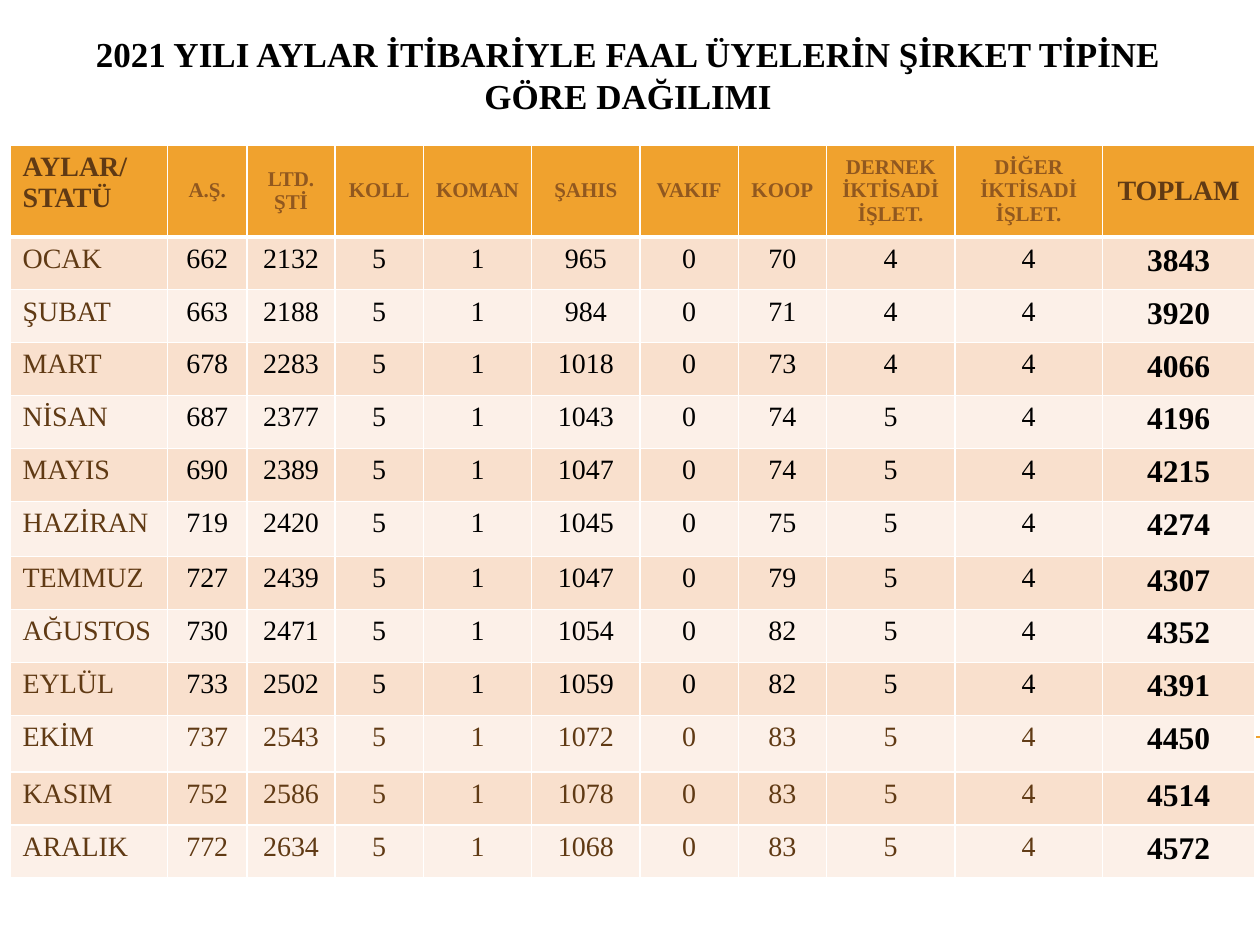
from lxml import etree
from pptx import Presentation
from pptx.dml.color import RGBColor
from pptx.enum.shapes import MSO_CONNECTOR
from pptx.enum.text import MSO_ANCHOR, MSO_AUTO_SIZE, PP_ALIGN
from pptx.oxml.ns import qn
from pptx.util import Inches, Pt

STRAIGHT = MSO_CONNECTOR.STRAIGHT
TOP, MIDDLE = MSO_ANCHOR.TOP, MSO_ANCHOR.MIDDLE
LEFT, CENTER = PP_ALIGN.LEFT, PP_ALIGN.CENTER
NO_AUTOFIT = MSO_AUTO_SIZE.NONE

BLACK = RGBColor(0x00, 0x00, 0x00)
WHITE = RGBColor(0xFF, 0xFF, 0xFF)
ORANGE = RGBColor(0xF0, 0xA2, 0x2E)
BROWN = RGBColor(0x60, 0x3A, 0x14)
LIGHT_BROWN = RGBColor(0x91, 0x58, 0x1F)
BANDS = (RGBColor(0xF9, 0xE0, 0xCD), RGBColor(0xFC, 0xF0, 0xE8))

FONT_NAME = "Times New Roman"
TITLE = "2021 YILI AYLAR İTİBARİYLE FAAL ÜYELERİN ŞİRKET TİPİNE GÖRE DAĞILIMI"
HEADERS = ["AYLAR/ STATÜ", "A.Ş.", "LTD. ŞTİ", "KOLL", "KOMAN", "ŞAHIS", "VAKIF",
           "KOOP", "DERNEK\nİKTİSADİ İŞLET.", "DİĞER İKTİSADİ İŞLET.", "TOPLAM"]
MONTHS = [
    ("OCAK", 662, 2132, 5, 1, 965, 0, 70, 4, 4),
    ("ŞUBAT", 663, 2188, 5, 1, 984, 0, 71, 4, 4),
    ("MART", 678, 2283, 5, 1, 1018, 0, 73, 4, 4),
    ("NİSAN", 687, 2377, 5, 1, 1043, 0, 74, 5, 4),
    ("MAYIS", 690, 2389, 5, 1, 1047, 0, 74, 5, 4),
    ("HAZİRAN", 719, 2420, 5, 1, 1045, 0, 75, 5, 4),
    ("TEMMUZ", 727, 2439, 5, 1, 1047, 0, 79, 5, 4),
    ("AĞUSTOS", 730, 2471, 5, 1, 1054, 0, 82, 5, 4),
    ("EYLÜL", 733, 2502, 5, 1, 1059, 0, 82, 5, 4),
    ("EKİM", 737, 2543, 5, 1, 1072, 0, 83, 5, 4),
    ("KASIM", 752, 2586, 5, 1, 1078, 0, 83, 5, 4),
    ("ARALIK", 772, 2634, 5, 1, 1068, 0, 83, 5, 4),
]
BROWN_FIGURES_FROM = 10
COLUMN_WIDTHS = [1.25, 0.63, 0.7, 0.7, 0.86, 0.86, 0.78, 0.7, 1.02, 1.17, 1.21]
HEADER_HEIGHT, ROW_HEIGHT = 0.73, 0.42
TALL_ROWS = {6: 0.44, 10: 0.45}

HEADER_FORMAT = {"size": Pt(12), "bold": True, "color": LIGHT_BROWN}
HEADER_EDGE_FORMAT = {"size": Pt(16), "bold": True, "color": BROWN}
MONTH_FORMAT = {"size": Pt(16), "bold": False, "color": BROWN}
FIGURE_FORMAT = {"size": Pt(16), "bold": False, "color": BLACK}
TOTAL_FORMAT = {"size": Pt(18), "bold": True, "color": BLACK}
TITLE_FORMAT = {"size": Pt(20), "bold": True, "color": BLACK}


def set_attributes(target, values):
    for name, value in values.items():
        setattr(target, name, value)


def write_text(text_frame, text, text_format, alignment):
    text_frame.text = text
    for paragraph in text_frame.paragraphs:
        paragraph.alignment = alignment
        for run in paragraph.runs:
            run.font.name = FONT_NAME
            for name, value in text_format.items():
                if name == "color":
                    run.font.color.rgb = value
                else:
                    setattr(run.font, name, value)


def set_borders(cell, bottom_width):
    properties = cell._tc.get_or_add_tcPr()
    widths = {"a:lnL": Pt(1), "a:lnR": Pt(1), "a:lnT": Pt(1), "a:lnB": bottom_width}
    for index, (tag, width) in enumerate(widths.items()):
        line = etree.Element(qn(tag), w=str(width))
        fill = etree.SubElement(line, qn("a:solidFill"))
        etree.SubElement(fill, qn("a:srgbClr"), val=str(WHITE))
        properties.insert(index, line)


def fill_cell(cell, text, text_format, color, alignment, anchor=TOP, bottom_width=Pt(1)):
    cell.vertical_anchor = anchor
    cell.fill.solid()
    cell.fill.fore_color.rgb = color
    if alignment == CENTER:
        set_attributes(cell, {"margin_left": Inches(0.08), "margin_right": Inches(0.08)})
    write_text(cell.text_frame, text, text_format, alignment)
    set_borders(cell, bottom_width)


def add_title(slide):
    title = slide.shapes.title
    set_attributes(title, {"left": Inches(0.28), "top": Inches(0.21),
                           "width": Inches(9.41), "height": Inches(0.71)})
    set_attributes(title.text_frame, {
        "word_wrap": True, "auto_size": NO_AUTOFIT, "vertical_anchor": TOP,
        "margin_left": Inches(0.15), "margin_right": Inches(0.15)})
    write_text(title.text_frame, TITLE, TITLE_FORMAT, CENTER)


def add_rule(slide):
    rule = slide.shapes.add_connector(
        STRAIGHT, Inches(0.56), Inches(5.85), Inches(10), Inches(5.85))
    rule.line.color.rgb = ORANGE
    rule.line.width = Pt(0.75)
    etree.SubElement(rule._element.spPr, qn("a:effectLst"))


def add_member_table(slide):
    heights = [HEADER_HEIGHT] + [
        TALL_ROWS.get(row, ROW_HEIGHT) for row in range(1, len(MONTHS) + 1)]
    table = slide.shapes.add_table(
        len(heights), len(HEADERS), Inches(0.08), Inches(1.15),
        Inches(sum(COLUMN_WIDTHS)), Inches(sum(heights))).table
    for column, width in zip(table.columns, COLUMN_WIDTHS):
        column.width = Inches(width)
    for row, height in zip(table.rows, heights):
        row.height = Inches(height)

    last = len(HEADERS) - 1
    for column, header in enumerate(HEADERS):
        text_format = HEADER_EDGE_FORMAT if column in (0, last) else HEADER_FORMAT
        alignment, anchor = (CENTER, MIDDLE) if column else (LEFT, TOP)
        fill_cell(table.cell(0, column), header, text_format, ORANGE,
                  alignment, anchor, Pt(3))

    for row, (month, *figures) in enumerate(MONTHS, start=1):
        band = BANDS[(row - 1) % 2]
        figure_format = MONTH_FORMAT if row >= BROWN_FIGURES_FROM else FIGURE_FORMAT
        fill_cell(table.cell(row, 0), month, MONTH_FORMAT, band, LEFT)
        for column, figure in enumerate(figures, start=1):
            fill_cell(table.cell(row, column), str(figure), figure_format, band, CENTER)
        fill_cell(table.cell(row, last), str(sum(figures)), TOTAL_FORMAT, band, CENTER)


def main():
    presentation = Presentation()
    presentation.slide_width = Inches(10)
    presentation.slide_height = Inches(7.5)
    slide = presentation.slides.add_slide(presentation.slide_layouts[0])
    subtitle = slide.placeholders[1].element
    subtitle.getparent().remove(subtitle)
    add_rule(slide)
    add_title(slide)
    add_member_table(slide)
    presentation.save("out.pptx")


if __name__ == "__main__":
    main()
